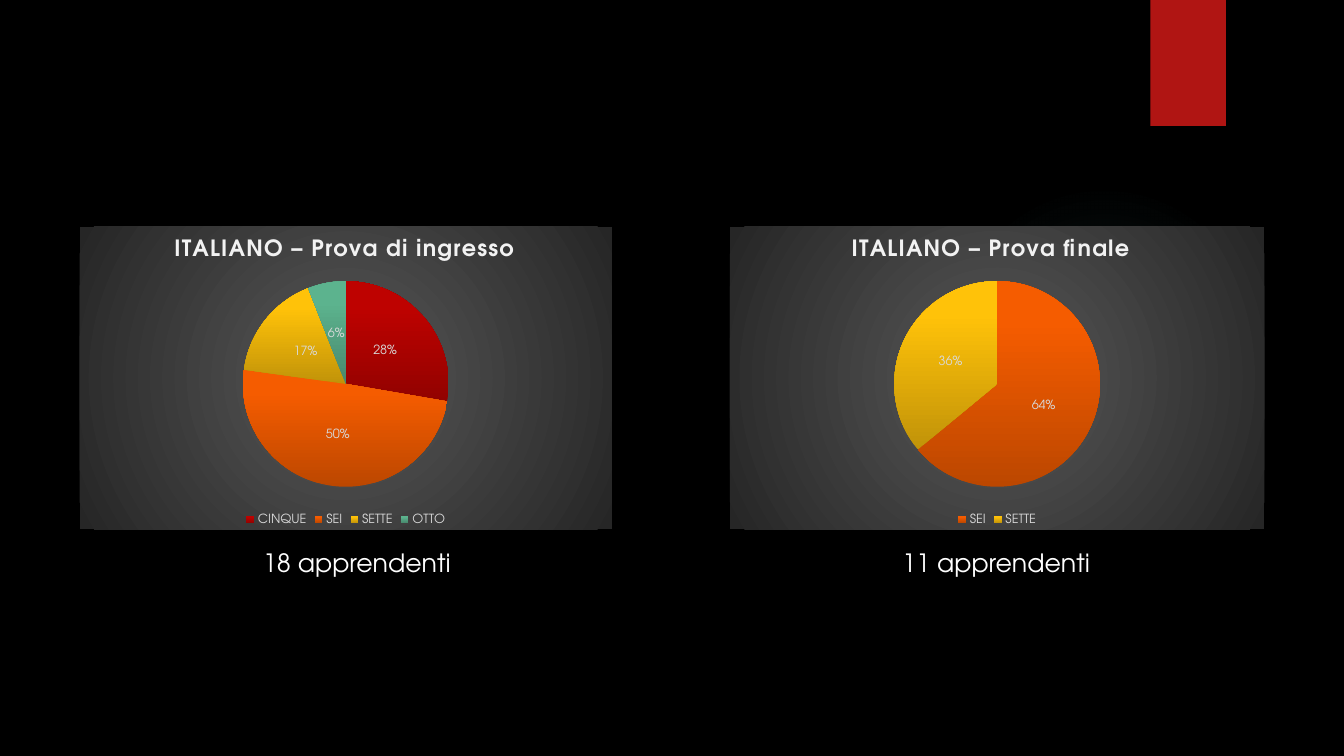
from lxml.etree import SubElement, Element
from pptx import Presentation
from pptx.chart.data import CategoryChartData
from pptx.dml.color import RGBColor
from pptx.enum.chart import XL_CHART_TYPE, XL_LABEL_POSITION, XL_LEGEND_POSITION
from pptx.enum.shapes import MSO_SHAPE
from pptx.enum.text import MSO_AUTO_SIZE
from pptx.oxml.ns import qn
from pptx.util import Inches, Pt

FONT = "TeX Gyre Adventor"
COLORS = {
    "background": "000000",
    "ribbon": "B01513",
    "glow": "50B9C1",
    "text": "FFFFFF",
    "title": "F2F2F2",
    "muted": "D9D9D9",
    "panel_center": "595959",
    "panel_edge": "262626",
}
# Each grade's slice runs from a dark bottom to a light top
GRADE_COLORS = {
    "CINQUE": ("920200", "BE0200"),
    "SEI": ("BC4700", "F55C00"),
    "SETTE": ("C19309", "FFC209"),
    "OTTO": ("48886D", "5CB38E"),
}


def rgb(name):
    return RGBColor.from_string(COLORS[name])


def style_font(font, size, color, bold=False):
    font.name, font.size, font.bold = FONT, Pt(size), bold
    font.color.rgb = rgb(color)


def radial_gradient(stops):
    """Circular fill from (position %, colour name, opacity %) stops."""
    gradient = Element(qn("a:gradFill"), rotWithShape="1")
    stop_list = SubElement(gradient, qn("a:gsLst"))
    for position, color, opacity in stops:
        stop = SubElement(stop_list, qn("a:gs"), pos=str(position * 1000))
        value = SubElement(stop, qn("a:srgbClr"), val=COLORS[color])
        if opacity < 100:
            SubElement(value, qn("a:alpha"), val=str(opacity * 1000))
    circle = SubElement(gradient, qn("a:path"))
    circle.set("path", "circle")
    SubElement(circle, qn("a:fillToRect"), l="50000", t="50000", r="50000", b="50000")
    return gradient


def add_plain_shape(slide, kind, left, top, width, height):
    shape = slide.shapes.add_shape(
        kind, Inches(left), Inches(top), Inches(width), Inches(height))
    shape.shadow.inherit = False
    shape.line.fill.background()
    return shape


def add_backdrop(slide):
    slide.background.fill.solid()
    slide.background.fill.fore_color.rgb = rgb("background")

    # Faint glow
    glow = add_plain_shape(slide, MSO_SHAPE.OVAL, 9.41, 1.83, 3.08, 3.08)
    glow.fill.background()
    properties = glow._element.spPr
    properties.replace(
        properties.find(qn("a:noFill")),
        radial_gradient([(0, "glow", 7), (36, "glow", 6), (69, "glow", 0)]))

    # Red ribbon
    ribbon = add_plain_shape(slide, MSO_SHAPE.RECTANGLE, 11.41, 0, 0.75, 1.25)
    ribbon.fill.solid()
    ribbon.fill.fore_color.rgb = rgb("ribbon")


def set_layout(layout, **settings):
    """Place a chart part by fractions of the chart's size."""
    manual = SubElement(layout, qn("c:manualLayout"))
    for tag, value in settings.items():
        SubElement(manual, qn(f"c:{tag}"), val=str(value))


def hide_empty_grades(chart, grades):
    """Drop legend entries and labels of grades nobody got."""
    empty = [index for index, share in enumerate(grades.values()) if not share]
    position = chart.legend._element.find(qn("c:legendPos"))
    labels = chart.plots[0].series[0].data_labels._element
    for index in reversed(empty):
        entry = Element(qn("c:legendEntry"))
        label = Element(qn("c:dLbl"))
        for part in (entry, label):
            SubElement(part, qn("c:idx"), val=str(index))
            SubElement(part, qn("c:delete"), val="1")
        position.addnext(entry)
        labels.insert(0, label)


def add_grade_pie(slide, box, title, title_left, grades):
    left, top, width, height = box
    data = CategoryChartData()
    data.categories = list(grades)
    data.add_series("Series 1", list(grades.values()))
    chart = slide.shapes.add_chart(
        XL_CHART_TYPE.PIE, Inches(left), Inches(top), Inches(width),
        Inches(height), data).chart
    style_font(chart.font, 10, "text")

    # Panel behind the pie
    panel = Element(qn("c:spPr"))
    panel.append(radial_gradient([(0, "panel_center", 100), (100, "panel_edge", 100)]))
    SubElement(SubElement(panel, qn("a:ln")), qn("a:noFill"))
    chart._chartSpace.chart.addnext(panel)

    # Title
    chart.has_title = True
    chart.chart_title.include_in_layout = False
    run = chart.chart_title.text_frame.paragraphs[0].add_run()
    run.text = title
    style_font(run.font, 16, "title", bold=True)
    run.font._element.set("spc", "100")
    title_element = chart.chart_title._element
    title_layout = title_element.find(qn("c:layout"))
    if title_layout is None:
        title_layout = Element(qn("c:layout"))
        title_element.find(qn("c:tx")).addnext(title_layout)
    set_layout(title_layout, xMode="edge", yMode="edge", x=title_left, y=0.02)

    # Legend
    chart.has_legend = True
    chart.legend.position = XL_LEGEND_POSITION.BOTTOM
    chart.legend.include_in_layout = False
    style_font(chart.legend.font, 9, "muted")

    # Slices
    plot = chart.plots[0]
    plot.vary_by_categories = True
    series = plot.series[0]
    for index, grade in enumerate(grades):
        slice_format = series.points[index].format
        slice_format.line.fill.background()
        slice_format.fill.gradient()
        slice_format.fill.gradient_angle = 90
        stops = zip(slice_format.fill.gradient_stops, (0, 0.8), GRADE_COLORS[grade])
        for stop, position, color in stops:
            stop.position = position
            stop.color.rgb = RGBColor.from_string(color)

    # Percentages
    labels = series.data_labels
    labels.show_percentage, labels.show_value = True, False
    labels.number_format, labels.number_format_is_linked = "0%", False
    labels.position = XL_LABEL_POSITION.CENTER
    style_font(labels.font, 9, "muted")
    hide_empty_grades(chart, grades)

    # Pie area
    plot_area = chart._chartSpace.chart.plotArea
    plot_layout = plot_area.find(qn("c:layout"))
    if plot_layout is None:
        plot_layout = Element(qn("c:layout"))
        plot_area.insert(0, plot_layout)
    set_layout(plot_layout, layoutTarget="inner", xMode="edge", yMode="edge",
               x=0.3, y=0.18, w=0.4, h=0.68)


def add_caption(slide, left, top, text):
    box = slide.shapes.add_textbox(Inches(left), Inches(top), Inches(2.12), Inches(0.4))
    frame = box.text_frame
    frame.word_wrap = False
    frame.auto_size = MSO_AUTO_SIZE.SHAPE_TO_FIT_TEXT
    run = frame.paragraphs[0].add_run()
    run.text = text
    style_font(run.font, 18, "text")


def add_test_result(slide, box, title, title_left, shares, caption_left, caption):
    grades = dict(zip(GRADE_COLORS, shares))
    add_grade_pie(slide, box, title, title_left, grades)
    add_caption(slide, caption_left, box[1] + box[3] + 0.13, caption)


def main():
    presentation = Presentation()
    presentation.slide_width, presentation.slide_height = Inches(13.33), Inches(7.5)
    slide = presentation.slides.add_slide(presentation.slide_layouts[6])
    add_backdrop(slide)
    add_test_result(slide, (0.79, 2.25, 5.28, 3), "ITALIANO – Prova di ingresso",
                    0.17, (28, 50, 17, 6), 2.51, "18 apprendenti")
    add_test_result(slide, (7.24, 2.25, 5.3, 3), "ITALIANO – Prova finale",
                    0.22, (0, 64, 36, 0), 8.85, "11 apprendenti")
    presentation.save("out.pptx")


if __name__ == "__main__":
    main()
